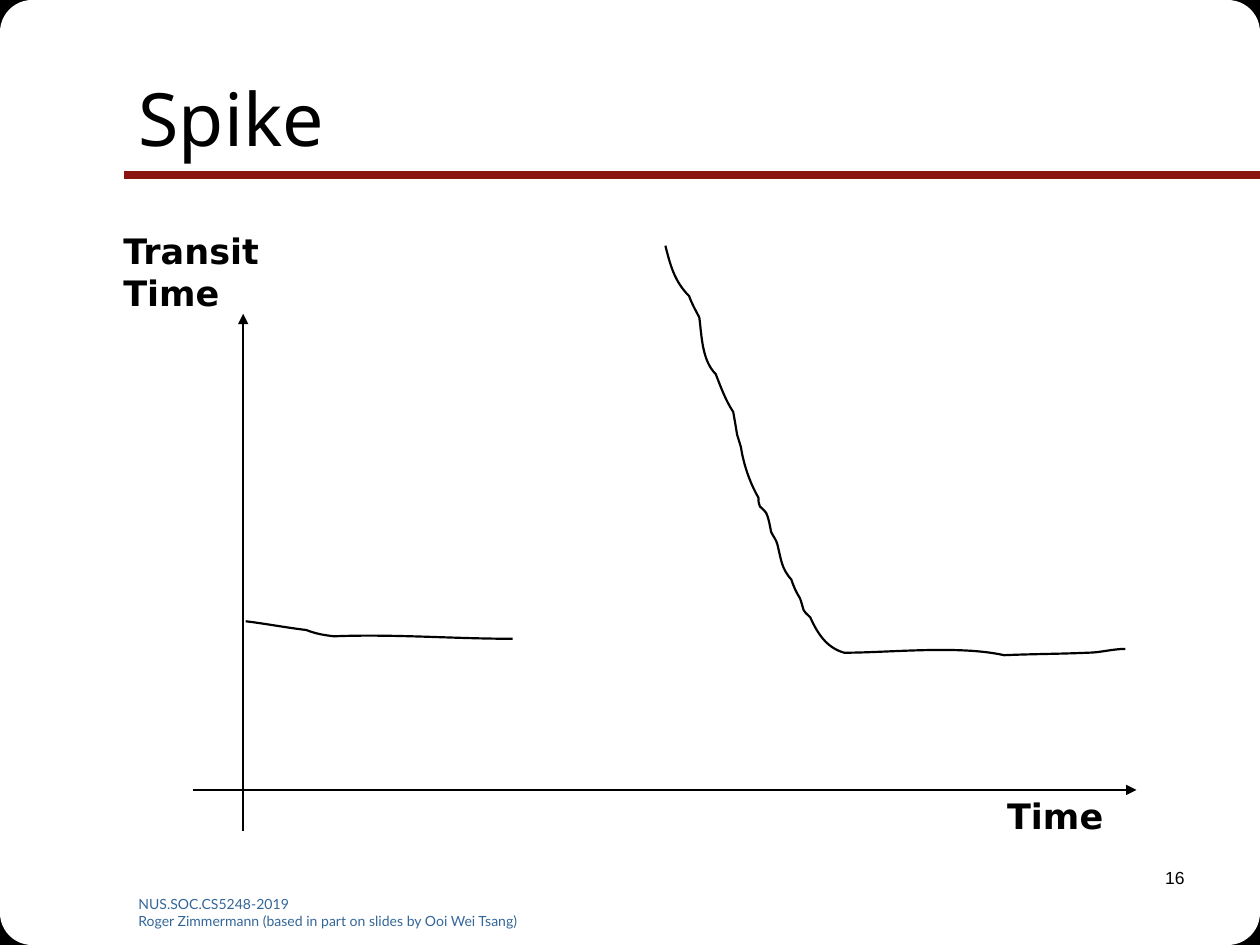
from itertools import product

from lxml import etree
from pptx import Presentation
from pptx.dml.color import RGBColor
from pptx.enum.shapes import MSO_CONNECTOR, MSO_SHAPE
from pptx.enum.text import MSO_ANCHOR, MSO_AUTO_SIZE, PP_ALIGN
from pptx.oxml.ns import qn
from pptx.util import Pt

BLACK = RGBColor(0x00, 0x00, 0x00)
WHITE = RGBColor(0xFF, 0xFF, 0xFF)
RED = RGBColor(0x89, 0x14, 0x11)
BLUE = RGBColor(0x33, 0x66, 0x99)
RECT, ROUND = MSO_SHAPE.RECTANGLE, MSO_SHAPE.ROUNDED_RECTANGLE
STRAIGHT = MSO_CONNECTOR.STRAIGHT
MIDDLE = MSO_ANCHOR.MIDDLE
GROW = MSO_AUTO_SIZE.SHAPE_TO_FIT_TEXT
LEFT, RIGHT = PP_ALIGN.LEFT, PP_ALIGN.RIGHT

WIDE, HIGH = 720, 540

# Cubic curves, relative to the plot box: a start, then three points per segment
CALM = [(30, 175.7), (41.5, 177.1), (53, 179.3), (64.6, 180.7),
        (70.3, 182.9), (74.6, 183.6), (80.4, 184.3),
        (114.2, 182.9), (148.1, 185.7), (182.6, 185.7)]
SPIKE = [(269.8, -38.9), (272.6, -28.1), (274.8, -18.7), (283.4, -10.1),
         (284.9, -5.8), (287, -2.2), (289.2, 2.1),
         (290.6, 12.2), (290.6, 26.6), (298.6, 34.5),
         (301.4, 41.7), (304.3, 49.7), (308.6, 56.1),
         (309.4, 60.5), (310.1, 64.8), (310.8, 69.1),
         (311.5, 71.3), (313, 76.3), (313, 76.3),
         (314.4, 85.7), (318, 96.5), (323, 105.1),
         (323, 106.5), (323, 108.7), (323.8, 110.1),
         (325.2, 111.6), (326.6, 112.3), (327.4, 113.7),
         (328.8, 116.6), (329.5, 120.9), (330.2, 124.5),
         (331, 126.7), (333.1, 128.9), (333.8, 131.7),
         (336, 140.4), (336, 145.4), (341.8, 151.9),
         (343.2, 156.2), (344.6, 159.1), (346.8, 162.7),
         (349.7, 171.3), (347.5, 168.5), (352.6, 173.5),
         (356.9, 182.9), (361.9, 190.8), (372, 193.7),
         (397.9, 193.7), (437.5, 189.3), (463.4, 195.1),
         (479.3, 194.4), (495.1, 194.4), (511, 193.7),
         (518.2, 193.7), (525.4, 191.5), (532.6, 191.5)]


def style(frame, face, size, color, bold=False, align=LEFT):
    for para in frame.paragraphs:
        para.alignment = align
        for run in para.runs:
            font = run.font
            font.name, font.size, font.bold = face, Pt(size), bold
            font.color.rgb = color


def add_text(slide, box, text, *look, wrap=True, **more):
    frame = slide.shapes.add_textbox(*map(Pt, box)).text_frame
    frame.word_wrap = wrap
    if not wrap:
        frame.auto_size = GROW
    frame.text = text
    style(frame, *look, **more)


def add_line(slide, ends, color, width, arrow=False):
    line = slide.shapes.add_connector(STRAIGHT, *map(Pt, ends))
    line.line.color.rgb = color
    line.line.width = Pt(width)
    if arrow:
        tail = etree.SubElement(line.line._get_or_add_ln(), qn("a:tailEnd"))
        tail.set("type", "triangle")
    etree.SubElement(line._element.spPr, qn("a:effectLst"))


def add_curve(slide, box, knots):
    left, top = box[:2]
    first, *rest = [(Pt(left + x), Pt(top + y)) for x, y in knots]
    pen = slide.shapes.build_freeform(*first)
    pen.add_line_segments(rest, close=False)
    curve = pen.convert_to_shape()
    # Join each three points into one cubic segment
    trace = curve._element.spPr.find(".//" + qn("a:path"))
    lines = trace.findall(qn("a:lnTo"))
    for i in range(0, len(lines), 3):
        cubic = etree.SubElement(trace, qn("a:cubicBezTo"))
        for line in lines[i:i + 3]:
            cubic.append(line[0])
            trace.remove(line)
    curve.shadow.inherit = False
    curve.fill.background()
    curve.line.color.rgb = BLACK
    curve.line.width = Pt(1.25)


def add_frame(slide, box):
    """Black corners, each rounded off by a larger white shape."""
    left, top, width, height = box
    for kind, side, color in ((RECT, 31, BLACK), (ROUND, 110, WHITE)):
        for x, y in product((left, left + width - side),
                            (top, top + height - side)):
            patch = slide.shapes.add_shape(kind, *map(Pt, (x, y, side, side)))
            patch.shadow.inherit = False
            patch.fill.solid()
            patch.fill.fore_color.rgb = color
            patch.line.fill.background()


def add_head(slide, box):
    left, top, width, height = box
    add_line(slide, (WIDE, 100, left - 1.2, 100), RED, 4.5)
    title = slide.shapes.title
    title.left, title.top, title.width, title.height = map(Pt, box)
    frame = title.text_frame
    frame.text = "Spike"
    frame.vertical_anchor = MIDDLE
    style(frame, "Noto Sans", 42, BLACK)


def add_foot(slide, box):
    left, top, width, height = box
    add_text(slide, (left, top + 16.2, 246, 20),
             "NUS.SOC.CS5248-2019\n"
             "Roger Zimmermann (based in part on slides by Ooi Wei Tsang)",
             "Lato", 8, BLUE)
    add_text(slide, (left + width - 150, top, 150, height),
             "16", "Arial", 10, BLACK, align=RIGHT)


def add_plot(slide, box):
    left, top, width, height = box
    base, stem = top + height - 23.5, left + 28.6
    # Axes
    add_line(slide, (left, base, left + width, base), BLACK, 1.25, True)
    add_line(slide, (stem, top + height, stem, top), BLACK, 1.25, True)
    # Axis names
    look = ("DejaVu Sans", 20, BLACK, True)
    add_text(slide, (left + width - 81, base - 0.7, 70, 32),
             "Time", *look, wrap=False)
    add_text(slide, (left - 47, top - 51.8, 94, 56),
             "Transit\nTime", *look, wrap=False)
    # Transit time before and after the gap
    for knots in (CALM, SPIKE):
        add_curve(slide, box, knots)


def main():
    deck = Presentation()
    deck.slide_width, deck.slide_height = Pt(WIDE), Pt(HIGH)
    slide = deck.slides.add_slide(deck.slide_layouts[5])
    add_frame(slide, (0, 0, WIDE, HIGH))
    add_head(slide, (72, 22, 612, 90))
    add_foot(slide, (72, 492, 612, 36))
    add_plot(slide, (110.4, 179.3, 539, 295.6))
    # Bring the title above the corner shapes
    tree = slide.shapes._spTree
    tree.append(slide.shapes.title._element)
    deck.save("out.pptx")


if __name__ == "__main__":
    main()
